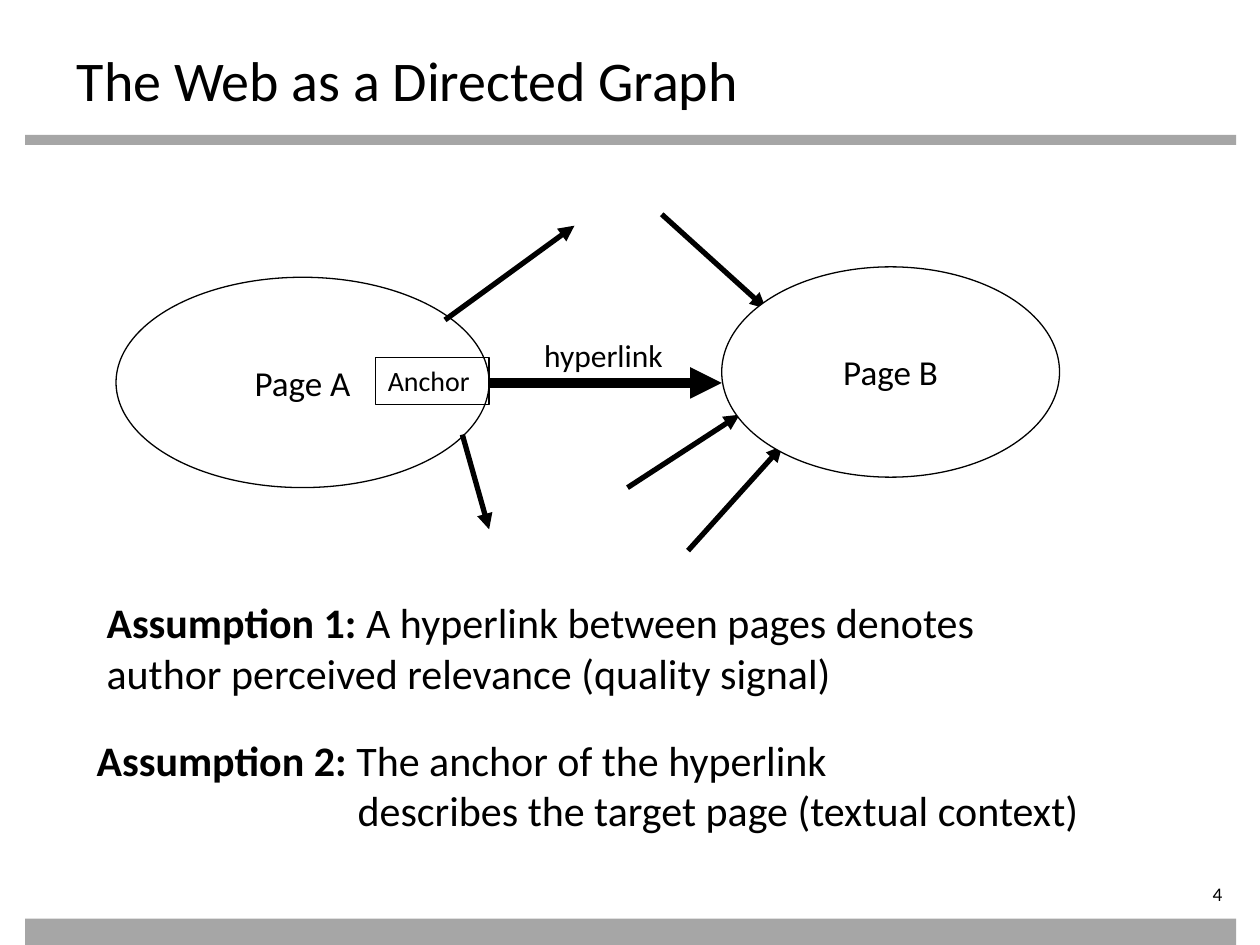
from typing import NamedTuple

from lxml import etree
from pptx import Presentation
from pptx.dml.color import RGBColor
from pptx.enum.shapes import MSO_CONNECTOR, MSO_SHAPE
from pptx.enum.text import MSO_ANCHOR, PP_ALIGN
from pptx.oxml.ns import qn
from pptx.util import Cm, Pt

RECTANGLE, OVAL = MSO_SHAPE.RECTANGLE, MSO_SHAPE.OVAL
STRAIGHT = MSO_CONNECTOR.STRAIGHT
LEFT, CENTER, RIGHT = PP_ALIGN.LEFT, PP_ALIGN.CENTER, PP_ALIGN.RIGHT
TOP, MIDDLE = MSO_ANCHOR.TOP, MSO_ANCHOR.MIDDLE
FONT = "Calibri"
COLORS = {"ink": "000000", "paper": "FFFFFF", "bar": "A6A6A6"}


class Frame(NamedTuple):
    left: float
    top: float
    width: float
    height: float


class Arrow(NamedTuple):
    start: tuple[float, float]
    end: tuple[float, float]
    weight: float = 3


class Assumption(NamedTuple):
    frame: Frame
    label: str
    lines: tuple[str, str]
    hang: float = 0


BARS = [Frame(0.51, 2.72, 24.41, 0.2), Frame(0.51, 18.52, 24.41, 0.53)]
HYPERLINK = Arrow((9.68, 7.72), (14.55, 7.72), 6)
OTHER_LINKS = [
    Arrow((9.32, 8.76), (9.86, 10.67)),
    Arrow((8.97, 6.45), (11.58, 4.55)),
    Arrow((12.65, 9.83), (14.91, 8.36)),
    Arrow((13.87, 11.1), (15.77, 8.99)),
    Arrow((13.34, 4.32), (15.44, 6.22)),
]
ASSUMPTIONS = [
    Assumption(Frame(1.9, 11.91, 22.78, 2.31), "Assumption 1:",
               (" A hyperlink between pages denotes",
                "author perceived relevance (quality signal)")),
    Assumption(Frame(1.7, 14.68, 21.39, 2.31), "Assumption 2:",
               (" The anchor of the hyperlink",
                "describes the target page (textual context)"), hang=5.26),
]


def color(name: str) -> RGBColor:
    return RGBColor.from_string(COLORS[name])


def add_span(para, text: str, size: float, bold: bool = False) -> None:
    span = para.add_run()
    span.text = text
    span.font.name = FONT
    span.font.size = Pt(size)
    span.font.bold = bold
    span.font.color.rgb = color("ink")


def write(shape, text: str, size: float, align=LEFT, anchor=TOP, wrap=False) -> None:
    shape.text_frame.word_wrap = wrap
    shape.text_frame.vertical_anchor = anchor
    para = shape.text_frame.paragraphs[0]
    para.alignment = align
    add_span(para, text, size)


def add_box(page, frame: Frame):
    return page.shapes.add_textbox(*map(Cm, frame))


def add_figure(page, kind, frame: Frame, fill: str | None = None, outlined: bool = True):
    shape = page.shapes.add_shape(kind, *map(Cm, frame))
    shape.shadow.inherit = False
    if fill:
        shape.fill.solid()
        shape.fill.fore_color.rgb = color(fill)
    else:
        shape.fill.background()
    if outlined:
        shape.line.color.rgb = color("ink")
        shape.line.width = Pt(0.75)
    else:
        shape.line.fill.background()
    return shape


def add_arrow(page, arrow: Arrow) -> None:
    line = page.shapes.add_connector(STRAIGHT, *map(Cm, arrow.start + arrow.end))
    line.line.color.rgb = color("ink")
    line.line.width = Pt(arrow.weight)
    etree.SubElement(line.line._get_or_add_ln(), qn("a:tailEnd"), type="triangle")
    etree.SubElement(line._element.spPr, qn("a:effectLst"))


def add_web_page(page, frame: Frame, name: str) -> None:
    write(add_figure(page, OVAL, frame, "paper"), name, 20, CENTER, MIDDLE)


def add_assumption(page, assumption: Assumption) -> None:
    """Bold label, then two lines, the second hanging at its own indent."""
    box = add_box(page, assumption.frame)
    box.text_frame.word_wrap = True
    para = box.text_frame.paragraphs[0]
    properties = para._p.get_or_add_pPr()
    properties.set("marL", str(Cm(assumption.hang)))
    properties.set("indent", str(-Cm(assumption.hang)))
    first, second = assumption.lines
    add_span(para, assumption.label, 24, bold=True)
    add_span(para, first, 24)
    para.add_line_break()
    add_span(para, second, 24)


def add_graph(page) -> None:
    add_arrow(page, HYPERLINK)
    add_web_page(page, Frame(2.34, 5.59, 7.52, 4.24), "Page A")
    write(add_box(page, Frame(10.72, 6.65, 3.05, 1.02)), "hyperlink", 18)
    for link in OTHER_LINKS:
        add_arrow(page, link)
    add_web_page(page, Frame(14.55, 5.38, 6.81, 4.24), "Page B")
    write(add_figure(page, RECTANGLE, Frame(7.57, 7.21, 2.29, 0.94)), "Anchor", 16)


def add_page_number(page, number: str) -> None:
    box = add_box(page, Frame(22.1, 17.78, 2.79, 0.56))
    text = box.text_frame
    text.margin_left = text.margin_top = text.margin_bottom = 0
    write(box, number, 11, RIGHT, wrap=True)


def main() -> None:
    deck = Presentation()
    deck.slide_width, deck.slide_height = Cm(25.4), Cm(19.05)
    page = deck.slides.add_slide(deck.slide_layouts[6])
    for bar in BARS:
        add_figure(page, RECTANGLE, bar, "bar", outlined=False)
    title = add_box(page, Frame(1.3, 0.79, 22.86, 1.4))
    write(title, "The Web as a Directed Graph", 32, wrap=True)
    for assumption in ASSUMPTIONS:
        add_assumption(page, assumption)
    add_graph(page)
    add_page_number(page, "4")
    deck.save("out.pptx")


if __name__ == "__main__":
    main()
